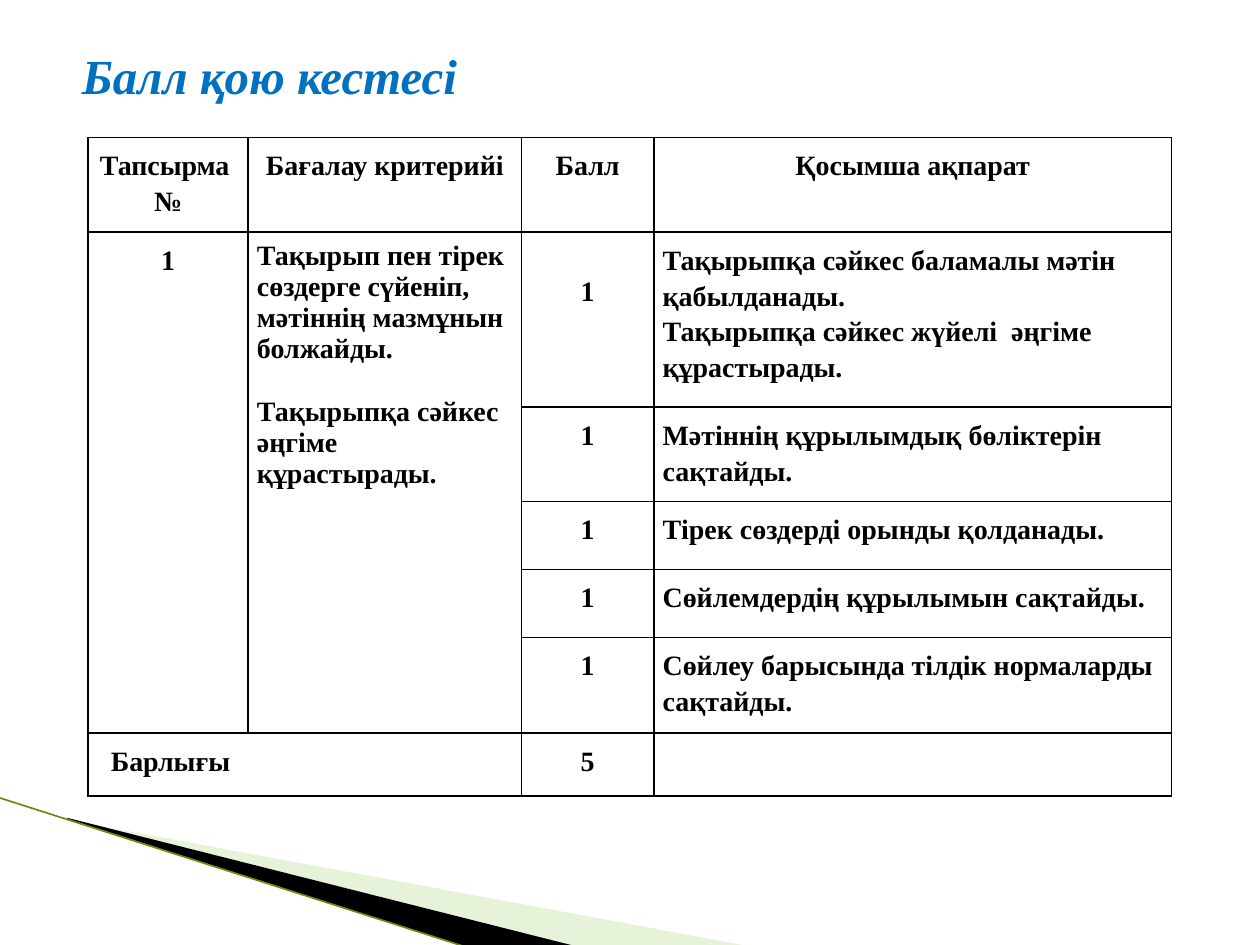
import pptx
import pptx.util
import pptx.dml.color
import pptx.enum.shapes
import pptx.enum.text
import pptx.oxml
import pptx.oxml.ns

Inches = pptx.util.Inches
Pt = pptx.util.Pt
Align = pptx.enum.text.PP_ALIGN
qn = pptx.oxml.ns.qn
FONT = "Times New Roman"
INK = "000000"

TITLE = "Балл қою кестесі"
HEAD = ["Тапсырма  №", "Бағалау критерийі", "Балл", "Қосымша ақпарат"]
GOALS = [
    "Тақырып пен тірек сөздерге сүйеніп, мәтіннің мазмұнын болжайды.",
    "Тақырыпқа сәйкес әңгіме құрастырады.",
]
NOTES = [
    ["Тақырыпқа сәйкес баламалы мәтін қабылданады.",
     "Тақырыпқа сәйкес жүйелі  әңгіме құрастырады."],
    ["Мәтіннің құрылымдық бөліктерін  сақтайды."],
    ["Тірек сөздерді орынды қолданады."],
    ["Сөйлемдердің құрылымын сақтайды."],
    ["Сөйлеу барысында тілдік нормаларды сақтайды."],
]
TOTAL = "Барлығы"
COLS = [1.27, 2.17, 1.05, 4.11]
ROWS = [0.75, 1.39, 0.75, 0.54, 0.54, 0.76, 0.5]
WEDGES = [
    ("C5E19F", 40, [(0.55, 6.51), (5.95, 7.51), (4.56, 7.51), (0.55, 6.5)]),
    (INK, 100, [(0.53, 6.49), (4.57, 7.51), (3.72, 7.52), (0.54, 6.5)]),
]
EDGE = ("6B8A12", (-0.01, 6.33), (3.71, 7.52))


def tint(part, code):
    part.rgb = pptx.dml.color.RGBColor.from_string(code)


def style(par, size, code):
    font = par.font
    font.name, font.size, font.bold = FONT, Pt(size), True
    tint(font.color, code)


def wedge(slide, code, alpha, spots):
    spots = [(Inches(x), Inches(y)) for x, y in spots]
    pen = slide.shapes.build_freeform(*spots[0])
    pen.add_line_segments(spots[1:], close=True)
    shape = pen.convert_to_shape()
    shape.shadow.inherit = False
    shape.line.fill.background()
    shape.fill.solid()
    tint(shape.fill.fore_color, code)
    if alpha < 100:
        color = shape.fill._xPr.find(".//" + qn("a:srgbClr"))
        color.append(pptx.oxml.parse_xml(
            f'<a:alpha {pptx.oxml.ns.nsdecls("a")} val="{alpha * 1000}"/>'))


def edge(slide, code, start, end):
    line = slide.shapes.add_connector(
        pptx.enum.shapes.MSO_CONNECTOR.STRAIGHT,
        *[Inches(n) for n in start + end])
    line.line.width = Pt(0.95)
    tint(line.line.color, code)
    line._element.spPr.append(pptx.oxml.parse_xml(
        f'<a:effectLst {pptx.oxml.ns.nsdecls("a")}/>'))


def frame(cell):
    cell.fill.background()
    for spot, side in enumerate("LRTB"):
        cell._tc.get_or_add_tcPr().insert(spot, pptx.oxml.parse_xml(
            f'<a:ln{side} {pptx.oxml.ns.nsdecls("a")} w="12700"><a:solidFill>'
            f'<a:srgbClr val="{INK}"/></a:solidFill></a:ln{side}>'))


def write(cell, lines, align=Align.CENTER, pitch=1.15, gap=0):
    cell.text = "\n".join(lines)
    for n, par in enumerate(cell.text_frame.paragraphs):
        par.alignment = align
        par.line_spacing = pitch
        if n and gap:
            par.space_before = Pt(gap)
        style(par, 16, INK)


def grid(slide):
    table = slide.shapes.add_table(
        len(ROWS), len(COLS), Inches(0.7), Inches(1.09),
        Inches(sum(COLS)), Inches(sum(ROWS))).table
    for col, width in zip(table.columns, COLS):
        col.width = Inches(width)
    for row, height in zip(table.rows, ROWS):
        row.height = Inches(height)
    for cell in table.iter_cells():
        frame(cell)
        cell.margin_left = cell.margin_right = Inches(0.07)
        cell.margin_top = cell.margin_bottom = Inches(0.07)
    last = len(ROWS) - 1
    for col in (0, 1):
        table.cell(1, col).merge(table.cell(last - 1, col))
    table.cell(last, 0).merge(table.cell(last, 1))

    for col, text in enumerate(HEAD):
        write(table.cell(0, col), [text])
    write(table.cell(1, 0), ["1"])
    write(table.cell(1, 1), GOALS, Align.LEFT, 1.0, 18)
    for row, lines in enumerate(NOTES, 1):
        write(table.cell(row, 2), ["1"])
        write(table.cell(row, 3), lines, Align.LEFT)
    table.cell(1, 2).margin_top = Inches(0.32)
    write(table.cell(last, 0), [TOTAL], Align.LEFT)
    table.cell(last, 0).margin_left = Inches(0.18)
    write(table.cell(last, 2), [str(len(NOTES))])


def head(slide):
    title = slide.shapes.title
    title.left, title.top = Inches(0.55), Inches(0.31)
    title.width, title.height = Inches(3.28), Inches(0.57)
    box = title.text_frame
    box.text = TITLE
    box.word_wrap = False
    box.auto_size = pptx.enum.text.MSO_AUTO_SIZE.NONE
    box.vertical_anchor = pptx.enum.text.MSO_ANCHOR.TOP
    par = box.paragraphs[0]
    par.alignment = Align.LEFT
    style(par, 28, "0070C0")
    par.font.italic = True


def main():
    deck = pptx.Presentation()
    deck.slide_width, deck.slide_height = Inches(10), Inches(7.5)
    slide = deck.slides.add_slide(deck.slide_layouts[5])
    for code, alpha, spots in WEDGES:
        wedge(slide, code, alpha, spots)
    edge(slide, *EDGE)
    grid(slide)
    head(slide)
    deck.save("out.pptx")


if __name__ == "__main__":
    main()
